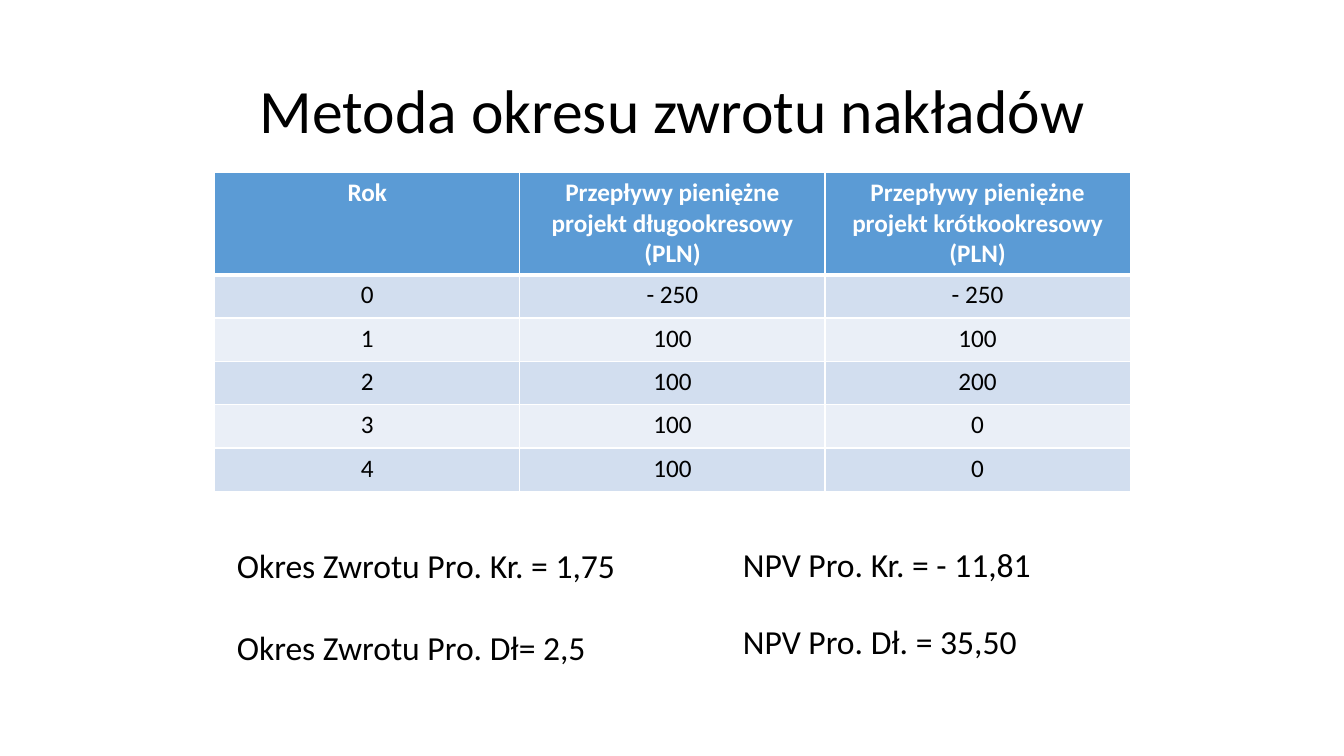
from lxml import etree
from pptx import Presentation
from pptx import util as u
from pptx.dml.color import RGBColor
from pptx.enum import text
from pptx.oxml.ns import qn

COLORS = {
    "black": "000000",
    "white": "FFFFFF",
    "header": "5B9BD5",
    "band_dark": "D2DEEF",
    "band_light": "EAEFF7",
}
FONT = "Calibri"

CASH_FLOWS = [
    ["Rok", "Przepływy pieniężne projekt długookresowy (PLN)",
     "Przepływy pieniężne projekt krótkookresowy (PLN)"],
    ["0", "- 250", "- 250"],
    ["1", "100", "100"],
    ["2", "100", "200"],
    ["3", "100", "0"],
    ["4", "100", "0"],
]

# Left, top, width, wording
RESULTS = [
    (7.27, 5.35, 6.06, "NPV Pro. Kr. = - 11,81"),
    (7.27, 6.11, 6.06, "NPV Pro. Dł. = 35,50"),
    (2.25, 6.17, 6.85, "Okres Zwrotu Pro. Dł= 2,5"),
    (2.25, 5.36, 6.85, "Okres Zwrotu Pro. Kr. = 1,75"),
]


def write_text(frame, wording, size=18, color="black", bold=False,
               align=text.PP_ALIGN.LEFT, line_spacing=None):
    paragraph = frame.paragraphs[0]
    paragraph.alignment = align
    paragraph.line_spacing = line_spacing
    run = paragraph.add_run()
    run.text = wording
    run.font.name = FONT
    run.font.size = u.Pt(size)
    run.font.bold = bold
    run.font.color.rgb = RGBColor.from_string(COLORS[color])


def set_borders(cell, color, bottom_width):
    properties = cell._tc.get_or_add_tcPr()
    widths = {"a:lnL": 1, "a:lnR": 1, "a:lnT": 1, "a:lnB": bottom_width}
    for position, (tag, width) in enumerate(widths.items()):
        line = etree.Element(qn(tag), w=str(u.Pt(width)))
        fill = etree.SubElement(line, qn("a:solidFill"))
        etree.SubElement(fill, qn("a:srgbClr"), val=COLORS[color])
        properties.insert(position, line)


class SlideBuilder:
    def __init__(self, presentation):
        self.slide = presentation.slides.add_slide(presentation.slide_layouts[5])

    def title(self, wording, left, top, width, height):
        shape = self.slide.shapes.title
        shape.left, shape.top = u.Inches(left), u.Inches(top)
        shape.width, shape.height = u.Inches(width), u.Inches(height)
        shape.text_frame.vertical_anchor = text.MSO_ANCHOR.MIDDLE
        write_text(shape.text_frame, wording, size=44,
                   align=text.PP_ALIGN.CENTER, line_spacing=0.9)

    def table(self, rows, left, top, width, header_height, row_height):
        height = header_height + row_height * (len(rows) - 1)
        shape = self.slide.shapes.add_table(
            len(rows), len(rows[0]), u.Inches(left), u.Inches(top),
            u.Inches(width), u.Inches(height))
        table = shape.table
        for row_index, row in enumerate(rows):
            is_header = row_index == 0
            table.rows[row_index].height = u.Inches(
                header_height if is_header else row_height)
            band = "band_dark" if row_index % 2 else "band_light"
            for column_index, wording in enumerate(row):
                cell = table.cell(row_index, column_index)
                cell.fill.solid()
                cell.fill.fore_color.rgb = RGBColor.from_string(
                    COLORS["header" if is_header else band])
                set_borders(cell, "white", bottom_width=3 if is_header else 1)
                write_text(cell.text_frame, wording, bold=is_header,
                           color="white" if is_header else "black",
                           align=text.PP_ALIGN.CENTER)

    def label(self, wording, left, top, width, height=0.5):
        shape = self.slide.shapes.add_textbox(
            u.Inches(left), u.Inches(top), u.Inches(width), u.Inches(height))
        shape.text_frame.word_wrap = True
        shape.text_frame.auto_size = text.MSO_AUTO_SIZE.SHAPE_TO_FIT_TEXT
        write_text(shape.text_frame, wording, size=24)


def main():
    presentation = Presentation()
    presentation.slide_width = u.Inches(13.33)
    presentation.slide_height = u.Inches(7.5)
    builder = SlideBuilder(presentation)

    # Title
    builder.title("Metoda okresu zwrotu nakładów", 0.92, 0.4, 11.5, 1.45)

    # Cash flows of both projects
    builder.table(CASH_FLOWS, 2.13, 1.71, 9.08, header_height=1, row_height=0.43)

    # Payback periods and net present values
    for left, top, width, wording in RESULTS:
        builder.label(wording, left, top, width)

    presentation.save("out.pptx")


if __name__ == "__main__":
    main()
